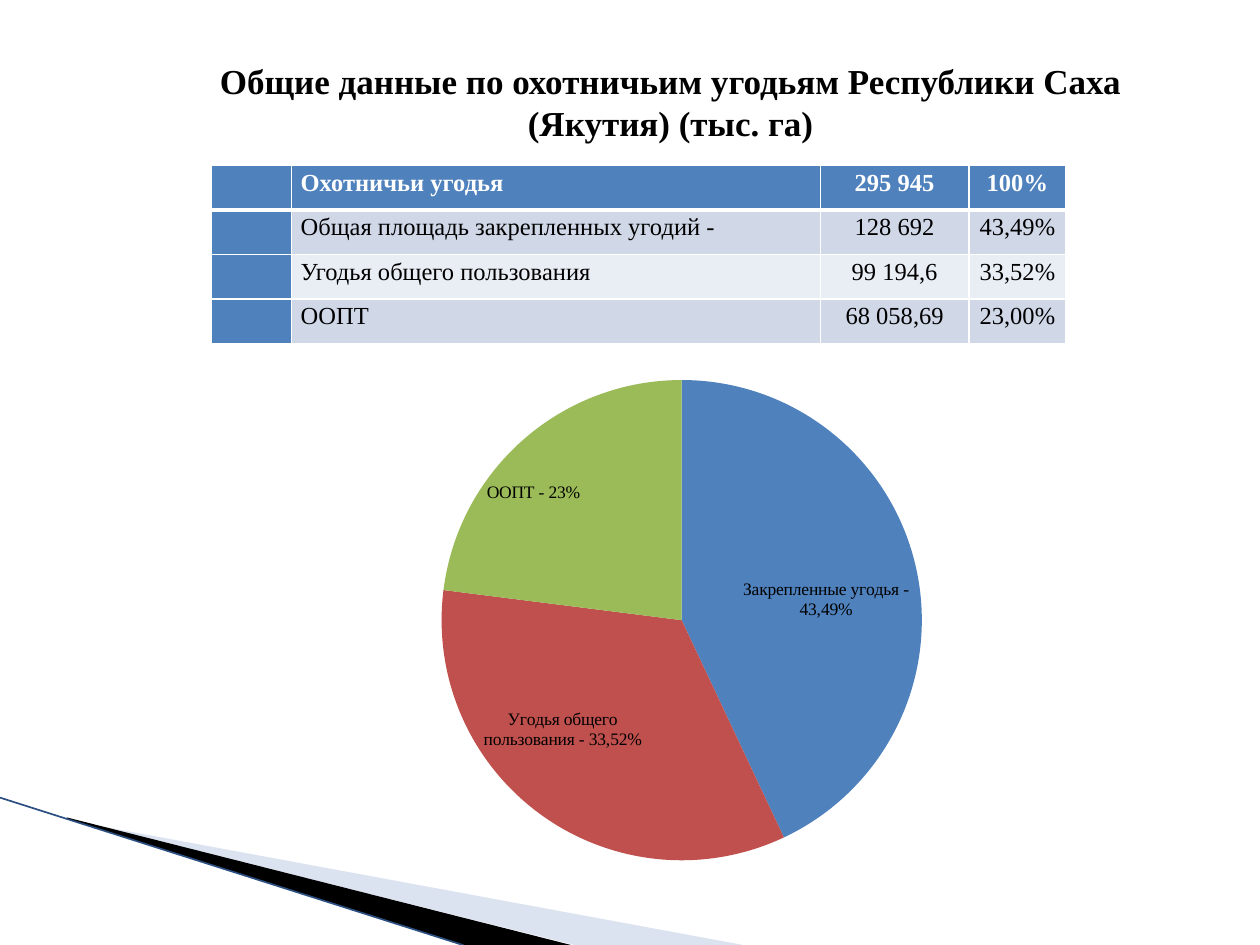
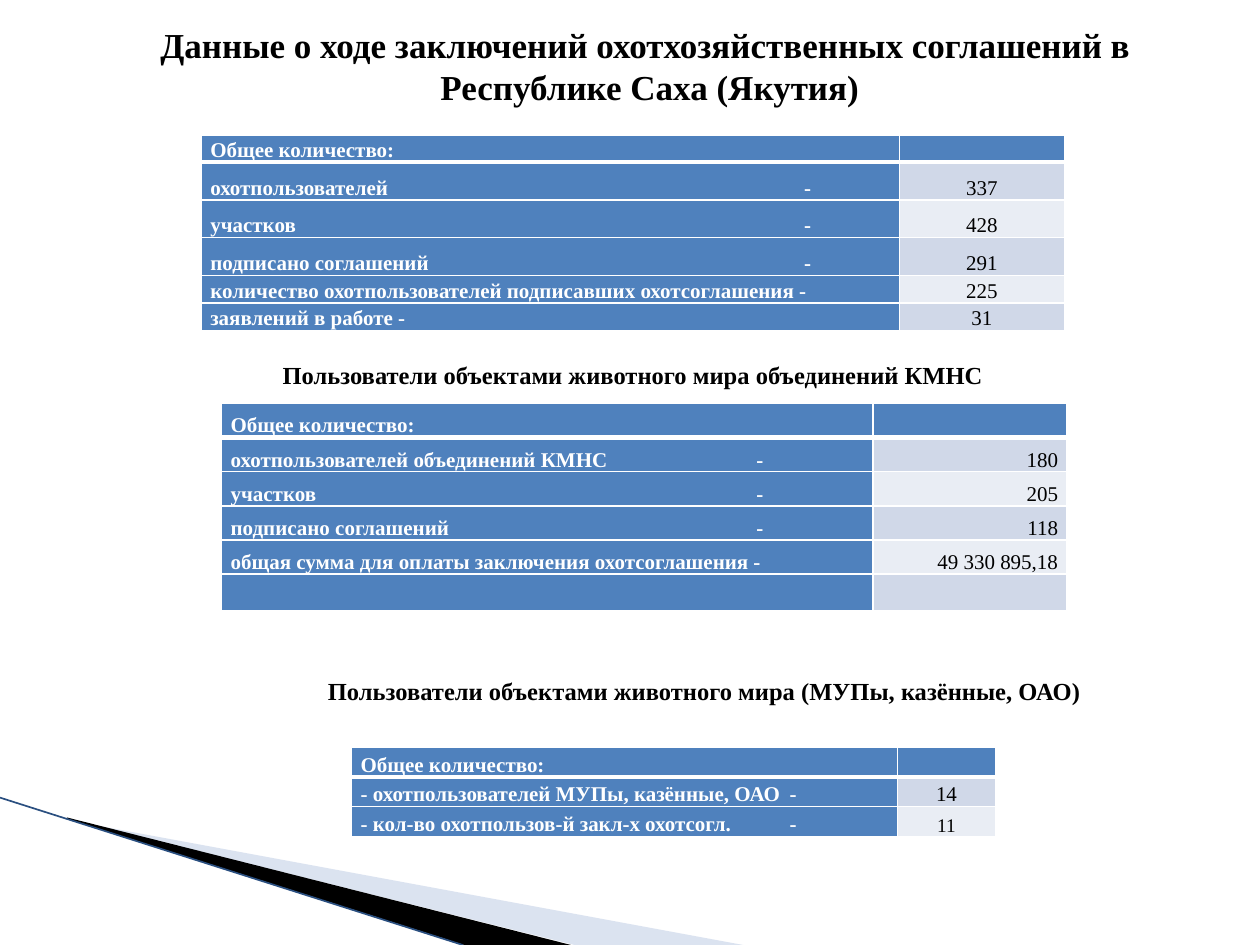
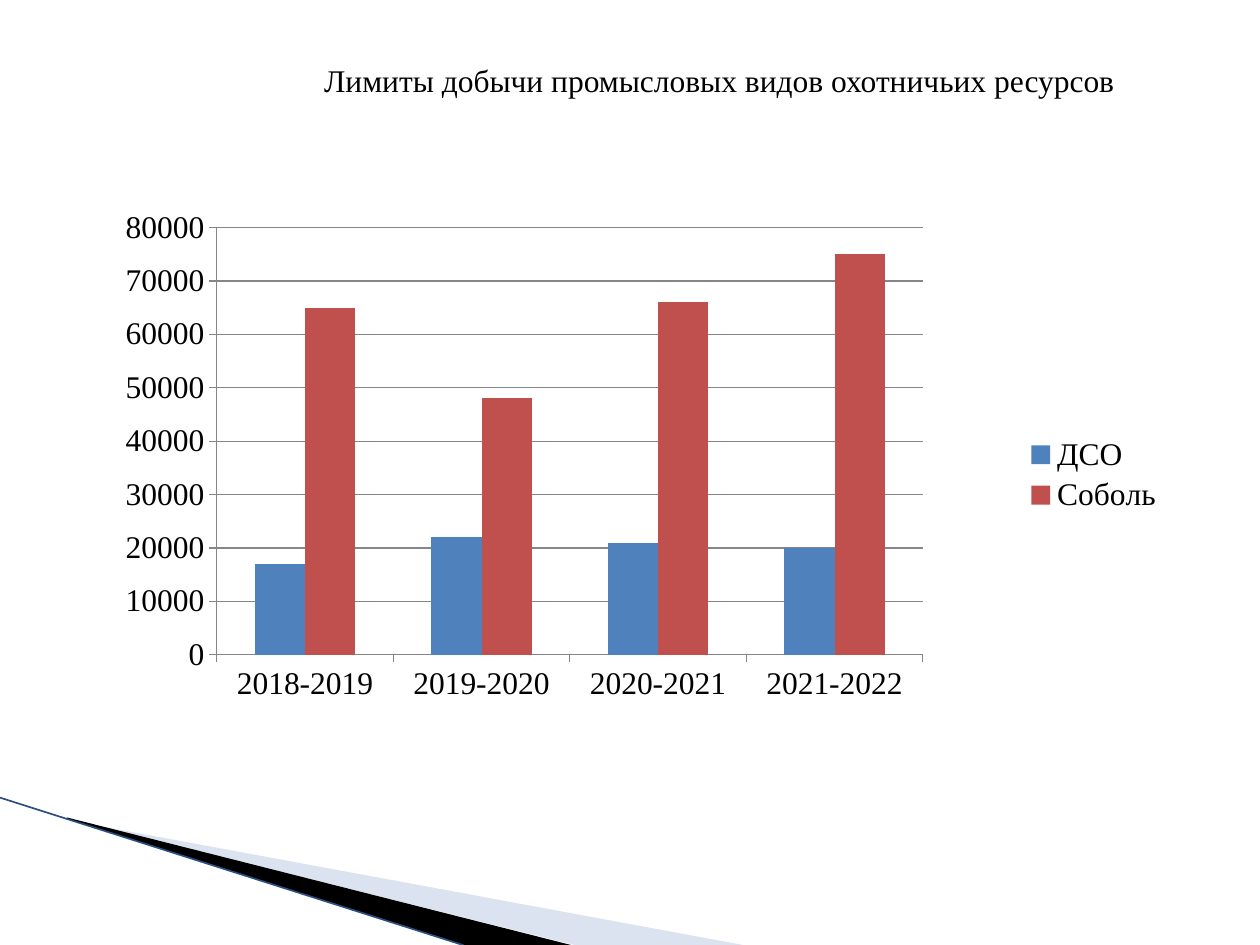
from dataclasses import dataclass

from lxml import etree
from pptx import Presentation
from pptx.chart.data import CategoryChartData
from pptx.dml.color import RGBColor
from pptx.enum.chart import XL_CHART_TYPE, XL_LABEL_POSITION, XL_LEGEND_POSITION, XL_TICK_MARK
from pptx.enum.shapes import MSO_CONNECTOR
from pptx.enum.text import MSO_ANCHOR, PP_ALIGN
from pptx.oxml.ns import qn
from pptx.util import Cm, Pt

LEFT, CENTER, RIGHT = PP_ALIGN.LEFT, PP_ALIGN.CENTER, PP_ALIGN.RIGHT
TOP, MIDDLE, BOTTOM = MSO_ANCHOR.TOP, MSO_ANCHOR.MIDDLE, MSO_ANCHOR.BOTTOM
PIE, COLUMNS = XL_CHART_TYPE.PIE, XL_CHART_TYPE.COLUMN_CLUSTERED
INSIDE_END = XL_LABEL_POSITION.INSIDE_END
LEGEND_RIGHT = XL_LEGEND_POSITION.RIGHT
TICK_OUT = XL_TICK_MARK.OUTSIDE
STRAIGHT = MSO_CONNECTOR.STRAIGHT


@dataclass(frozen=True)
class Theme:
    """Colours, font and type sizes shared by all slides."""
    font: str = "Times New Roman"
    black: RGBColor = RGBColor(0, 0, 0)
    white: RGBColor = RGBColor(255, 255, 255)
    blue: RGBColor = RGBColor.from_string("4F81BD")
    red: RGBColor = RGBColor.from_string("C0504D")
    green: RGBColor = RGBColor.from_string("9BBB59")
    bands: tuple = (RGBColor.from_string("D0D8E8"), RGBColor.from_string("E9EDF4"))
    wedge: RGBColor = RGBColor.from_string("A7B9DB")
    edge: RGBColor = RGBColor.from_string("2A4F80")
    grid: RGBColor = RGBColor.from_string("868686")
    title: int = 20
    caption: int = 18
    heading: int = 14
    cell: int = 12
    small: int = 11
    label: int = 10


THEME = Theme()


def apply_format(target, values):
    """Set every named attribute on the target."""
    for name, value in values.items():
        setattr(target, name, value)


def style_font(font, size, color=THEME.black, bold=False):
    """Give a font the deck typeface, size, colour and weight."""
    apply_format(font, {"name": THEME.font, "size": Pt(size), "bold": bold})
    font.color.rgb = color


def add_wedge(page, points, color, alpha=None):
    """Draw a filled outline through points given in centimetres."""
    corners = [(Cm(x), Cm(y)) for x, y in points]
    builder = page.shapes.build_freeform(*corners[0], scale=1.0)
    builder.add_line_segments(corners[1:], close=True)
    shape = builder.convert_to_shape()
    shape.shadow.inherit = False
    shape.fill.solid()
    shape.fill.fore_color.rgb = color
    shape.line.fill.background()
    if alpha is not None:
        paint = shape.fill._xPr.find(qn("a:solidFill"))[0]
        etree.SubElement(paint, qn("a:alpha"), val=str(alpha * 1000))


def add_page(deck):
    """Add a blank page with the corner decoration."""
    page = deck.slides.add_slide(deck.slide_layouts[6])
    add_wedge(page, [(1.4, 16.54), (14.98, 19.05), (11.58, 19.05), (1.4, 16.51)],
              THEME.wedge, alpha=40)
    add_wedge(page, [(1.35, 16.48), (11.51, 19.05), (9.36, 19.05), (1.37, 16.51)],
              THEME.black)
    edge = page.shapes.add_connector(STRAIGHT, Cm(0), Cm(16.08), Cm(9.33), Cm(19.05))
    apply_format(edge.line, {"width": Pt(0.95)})
    edge.line.color.rgb = THEME.edge
    etree.SubElement(edge._element.spPr, qn("a:effectLst"))
    return page


def add_heading(page, area, text, size, bold=True):
    """Add a centred heading in an area given in centimetres."""
    box = page.shapes.add_textbox(*map(Cm, area))
    frame = box.text_frame
    apply_format(frame, {"word_wrap": True, "vertical_anchor": MIDDLE,
                         "margin_left": 0, "margin_right": 0})
    frame.text = text
    para = frame.paragraphs[0]
    para.alignment = CENTER
    for span in para.runs:
        style_font(span.font, size, bold=bold)


def add_borders(cell, row):
    """Rule a cell in white, with a thick line under the header."""
    widths = {"L": 1, "R": 1, "T": 3 if row == 1 else 1, "B": 3 if row == 0 else 1}
    properties = cell._tc.get_or_add_tcPr()
    for side, width in widths.items():
        line = etree.SubElement(properties, qn(f"a:ln{side}"), w=str(Pt(width)))
        fill = etree.SubElement(line, qn("a:solidFill"))
        etree.SubElement(fill, qn("a:srgbClr"), val=str(THEME.white))


def write_cell(cell, text, size, accent, alignment, tab, spacing):
    """Write one table cell, in bold white when accented."""
    para = cell.text_frame.paragraphs[0]
    apply_format(para, {"alignment": alignment, "line_spacing": spacing})
    if not text:
        etree.SubElement(para._p, qn("a:endParaRPr"), sz=str(size * 100))
        return
    if "\t" in text:
        stops = etree.SubElement(para._p.get_or_add_pPr(), qn("a:tabLst"))
        etree.SubElement(stops, qn("a:tab"), pos=str(Cm(tab)), algn="l")
    span = para.add_run()
    span.text = text
    style_font(span.font, size, THEME.white if accent else THEME.black, accent)


def add_grid(page, corner, widths, heights, rows, aligns, size=THEME.cell,
             anchor=BOTTOM, tab=0, spacing=1.15):
    """Add a table with an accented header and first column."""
    table = page.shapes.add_table(len(rows), len(widths), *map(Cm, corner),
                                  Cm(sum(widths)), Cm(sum(heights))).table
    apply_format(table, {"first_row": False, "horz_banding": False})
    for column, width in zip(table.columns, widths):
        column.width = Cm(width)
    for r, (height, texts) in enumerate(zip(heights, rows)):
        table.rows[r].height = Cm(height)
        for c, text in enumerate(texts):
            cell = table.cell(r, c)
            accent = r == 0 or c == 0
            apply_format(cell, {"margin_left": Cm(0.18), "margin_right": Cm(0.18),
                                "margin_top": 0, "margin_bottom": 0,
                                "vertical_anchor": anchor})
            add_borders(cell, r)
            cell.fill.solid()
            cell.fill.fore_color.rgb = THEME.blue if accent else THEME.bands[(r - 1) % 2]
            write_cell(cell, text, size, accent, aligns[c], tab, spacing)
    return table


def add_manual_layout(layout, values):
    """Fill a chart layout element with fixed values."""
    manual = etree.SubElement(layout, qn("c:manualLayout"))
    for name, value in values.items():
        etree.SubElement(manual, qn(f"c:{name}"), val=str(value))


def place_plot(chart, x, y, w, h):
    """Fix the inner plot area as fractions of the chart."""
    area = chart._chartSpace.chart.plotArea
    for old in area.findall(qn("c:layout")):
        area.remove(old)
    layout = etree.Element(qn("c:layout"))
    area.insert(0, layout)
    add_manual_layout(layout, {"layoutTarget": "inner", "xMode": "edge", "yMode": "edge",
                               "x": x, "y": y, "w": w, "h": h})


def add_graph(page, kind, area, categories, series, size, plot_area):
    """Add a chart with the deck font and a fixed plot area."""
    data = CategoryChartData()
    data.categories = categories
    for name, values in series.items():
        data.add_series(name, values)
    chart = page.shapes.add_chart(kind, *map(Cm, area), data).chart
    apply_format(chart, {"has_title": False, "has_legend": False})
    style_font(chart.font, size)
    place_plot(chart, *plot_area)
    return chart


def paint(part, color):
    """Fill a chart series or point."""
    part.format.fill.solid()
    part.format.fill.fore_color.rgb = color


def label_slice(point, x, y):
    """Show the category name on a slice, moved by fractions of the chart."""
    label = point.data_label
    label.position = INSIDE_END
    style_font(label.font, THEME.label)
    element = label._get_or_add_dLbl()
    element.find(qn("c:showVal")).set("val", "0")
    element.find(qn("c:showCatName")).set("val", "1")
    layout = etree.Element(qn("c:layout"))
    element.insert(1, layout)
    add_manual_layout(layout, {"x": x, "y": y})


def add_share_pie(page, area, shares):
    """Add a pie labelled with its category names."""
    chart = add_graph(page, PIE, area, list(shares), {"Series 1": list(shares.values())},
                      THEME.label, (0.32, 0.03, 0.47, 0.9))
    chart.plots[0].vary_by_categories = True
    colors = (THEME.blue, THEME.red, THEME.green)
    offsets = ((0, 0.02), (-0.06, -0.11), (-0.04, 0.07))
    for index, (color, offset) in enumerate(zip(colors, offsets)):
        point = chart.plots[0].series[0].points[index]
        paint(point, color)
        label_slice(point, *offset)


def add_limit_columns(page, area, seasons, limits):
    """Add clustered columns with a legend on the right."""
    chart = add_graph(page, COLUMNS, area, seasons, limits, THEME.caption,
                      (0.13, 0.06, 0.64, 0.76))
    apply_format(chart.plots[0], {"gap_width": 150, "overlap": 0,
                                  "vary_by_categories": False})
    for series, color in zip(chart.plots[0].series, (THEME.blue, THEME.red)):
        paint(series, color)
    chart.has_legend = True
    apply_format(chart.legend, {"position": LEGEND_RIGHT, "include_in_layout": False})
    style_font(chart.legend.font, THEME.caption)
    apply_format(chart.value_axis, {"minimum_scale": 0, "maximum_scale": 80000,
                                    "major_unit": 10000, "has_major_gridlines": True})
    lines = [chart.value_axis.major_gridlines.format.line]
    for axis in (chart.category_axis, chart.value_axis):
        axis.major_tick_mark = TICK_OUT
        style_font(axis.tick_labels.font, THEME.caption)
        lines.append(axis.format.line)
    for line in lines:
        line.width = Pt(0.75)
        line.color.rgb = THEME.grid


def build_grounds_page(deck):
    """Show the hunting grounds by area and share."""
    page = add_page(deck)
    add_grid(page, (4.25, 3.33), (1.63, 10.66, 2.99, 1.96), [0.9] * 4, [
        ("", "Охотничьи угодья", "295 945", "100%"),
        ("", "Общая площадь закрепленных угодий -", "128 692", "43,49%"),
        ("", "Угодья общего пользования", "99 194,6", "33,52%"),
        ("", "ООПТ", "68 058,69", "23,00%"),
    ], (LEFT, LEFT, CENTER, CENTER), THEME.heading, TOP)
    add_heading(page, (3.73, 1.07, 19.58, 1.96),
                "Общие данные по охотничьим угодьям Республики Саха (Якутия) (тыс. га)",
                THEME.title)
    add_share_pie(page, (2.31, 7.32, 20.6, 10.8), {
        "Закрепленные угодья - 43,49%": 43,
        "Угодья общего пользования - 33,52%": 34,
        "ООПТ - 23%": 23,
    })


def build_agreements_page(deck):
    """Show three tables on hunting agreements."""
    page = add_page(deck)
    header = ("Общее количество:", "")
    add_heading(page, (2.9, 0.3, 20.22, 2.06),
                "Данные о ходе заключений охотхозяйственных соглашений в\v"
                " Республике Саха (Якутия)", THEME.title)
    add_grid(page, (4.06, 2.72), (14.07, 3.33), (0.38, 0.76, 0.76, 0.76, 0.56, 0.38), [
        header,
        ("охотпользователей\t-", "337"),
        ("участков\t-", "428"),
        ("подписано соглашений\t-", "291"),
        ("количество охотпользователей подписавших охотсоглашения -", "225"),
        ("заявлений в работе -", "31"),
    ], (LEFT, CENTER), tab=11.97, spacing=1.08)
    add_heading(page, (5.38, 7.12, 14.76, 0.86),
                "Пользователи объектами животного мира объединений КМНС", THEME.heading)
    add_grid(page, (4.47, 8.13), (13.13, 3.91), [0.69] * 5 + [0.74], [
        header,
        ("охотпользователей объединений КМНС\t-", "180"),
        ("участков\t-", "205"),
        ("подписано соглашений\t-", "118"),
        ("общая сумма для оплаты заключения охотсоглашения -", "49 330 895,18"),
        ("", ""),
    ], (LEFT, RIGHT), tab=10.6)
    add_heading(page, (6.3, 13.49, 15.8, 0.86),
                "Пользователи объектами животного мира (МУПы, казённые, ОАО)",
                THEME.heading)
    enterprises = add_grid(page, (7.09, 15.06), (11, 1.98), [0.6] * 3, [
        header,
        ("- охотпользователей МУПы, казённые, ОАО\t-", "14"),
        ("- кол-во охотпользов-й закл-х охотсогл.\t-", "11"),
    ], (LEFT, CENTER), tab=8.65)
    signed = enterprises.cell(2, 1).text_frame.paragraphs[0].runs[0]
    signed.font.size = Pt(THEME.small)


def build_limits_page(deck):
    """Show the harvest limits by season."""
    page = add_page(deck)
    add_heading(page, (5.69, 1.1, 17.63, 1.02),
                "Лимиты добычи промысловых видов охотничьих ресурсов",
                THEME.caption, bold=False)
    add_limit_columns(page, (1.48, 3.91, 22.24, 11.33),
                      ["2018-2019", "2019-2020", "2020-2021", "2021-2022"],
                      {"ДСО": (17000, 22000, 21000, 20000),
                       "Соболь": (65000, 48000, 66000, 75000)})


def main():
    """Build and save the deck."""
    deck = Presentation()
    apply_format(deck, {"slide_width": Cm(25.4), "slide_height": Cm(19.05)})
    build_grounds_page(deck)
    build_agreements_page(deck)
    build_limits_page(deck)
    deck.save("out.pptx")


if __name__ == "__main__":
    main()
